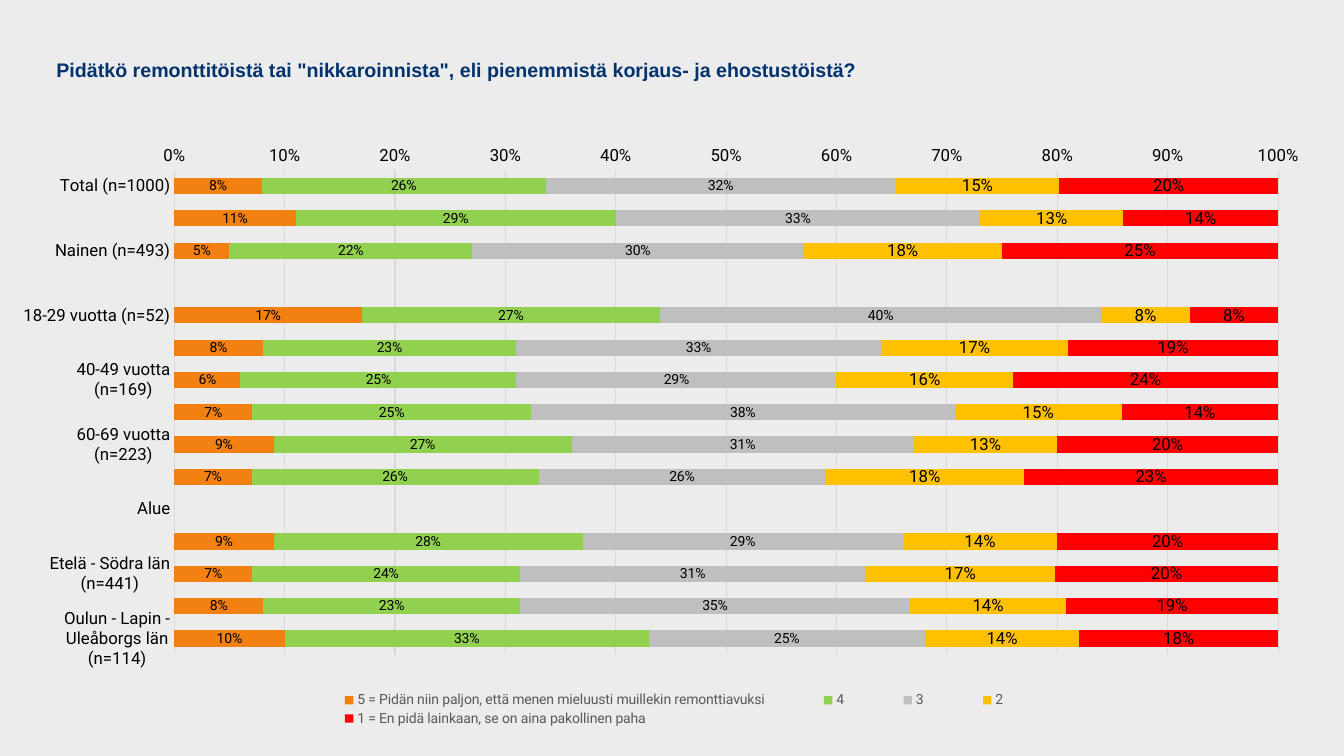
import dataclasses
from typing import Optional

import pptx
import pptx.chart.chart
import pptx.chart.data
import pptx.dml.color
import pptx.enum.chart
import pptx.enum.text
import pptx.oxml
import pptx.oxml.ns
import pptx.slide
import pptx.util

SLIDE_WIDTH = pptx.util.Inches(13.33)
SLIDE_HEIGHT = pptx.util.Inches(7.5)
COLOURS = {
    "background": "ECECED",
    "title": "00326E",
    "text": "000000",
    "legend": "595959",
    "grid": "D9D9D9",
    "orange": "F38112",
    "green": "92D050",
    "grey": "BFBFBF",
    "yellow": "FFC000",
    "red": "FF0000",
}
CATEGORIES = [
    "Total (n=1000)", "Mies (n=505)", "Nainen (n=493)", "Ikäryhmä",
    "18-29 vuotta (n=52)", "30-39 vuotta (n=138)", "40-49 vuotta (n=169)",
    "50-59 vuotta (n=182)", "60-69 vuotta (n=223)", "70+ vuotta (n=236)",
    "Alue", "Itä - Östra län (n=96)", "Etelä - Södra län (n=441)",
    "Länsi - Västra län (n=349)", "Oulun - Lapin - Uleåborgs län (n=114)",
]


@dataclasses.dataclass(frozen=True)
class Area:
    left: float
    top: float
    width: float
    height: float

    def on_slide(self) -> tuple[int, int, int, int]:
        return (
            int(self.left * SLIDE_WIDTH), int(self.top * SLIDE_HEIGHT),
            int(self.width * SLIDE_WIDTH), int(self.height * SLIDE_HEIGHT),
        )


@dataclasses.dataclass(frozen=True)
class Answer:
    name: str
    colour: str
    label_size: int
    percents: list[Optional[int]]


TITLE_AREA = Area(0.042, 0.0827, 0.916, 0.032)
CHART_AREA = Area(0.0173, 0.1773, 0.9685, 0.7907)
PLOT_SHARE = Area(0.116, 0.06, 0.848, 0.811)
LEGEND_SHARE = Area(0.205, 0.93, 0.59, 0.065)

ANSWERS = [
    Answer("5 = Pidän niin paljon, että menen mieluusti muillekin remonttiavuksi", "orange", 10,
           [8, 11, 5, None, 17, 8, 6, 7, 9, 7, None, 9, 7, 8, 10]),
    Answer("4", "green", 10,
           [26, 29, 22, None, 27, 23, 25, 25, 27, 26, None, 28, 24, 23, 33]),
    Answer("3", "grey", 10,
           [32, 33, 30, None, 40, 33, 29, 38, 31, 26, None, 29, 31, 35, 25]),
    Answer("2", "yellow", 12,
           [15, 13, 18, None, 8, 17, 16, 15, 13, 18, None, 14, 17, 14, 14]),
    Answer("1 = En pidä lainkaan, se on aina pakollinen paha", "red", 12,
           [20, 14, 25, None, 8, 19, 24, 14, 20, 23, None, 20, 20, 19, 18]),
]


def colour(name: str) -> pptx.dml.color.RGBColor:
    return pptx.dml.color.RGBColor.from_string(COLOURS[name])


def style_font(font, size: int, colour_name: str = "text", face: str = "Roboto", bold: bool = False) -> None:
    font.name = face
    font.size = pptx.util.Pt(size)
    font.bold = bold
    font.color.rgb = colour(colour_name)


def style_line(line) -> None:
    line.color.rgb = colour("grid")
    line.width = pptx.util.Pt(0.75)


def set_layout(parent, position: int, area: Area, inner: bool = False) -> None:
    for layout in parent.findall(pptx.oxml.ns.qn("c:layout")):
        parent.remove(layout)
    target = '<c:layoutTarget val="inner"/>' if inner else ""
    parent.insert(position, pptx.oxml.parse_xml(
        f'<c:layout {pptx.oxml.ns.nsdecls("c")}><c:manualLayout>{target}'
        '<c:xMode val="edge"/><c:yMode val="edge"/>'
        f'<c:x val="{area.left}"/><c:y val="{area.top}"/>'
        f'<c:w val="{area.width}"/><c:h val="{area.height}"/>'
        '</c:manualLayout></c:layout>'
    ))


def add_title(slide: pptx.slide.Slide) -> None:
    text_frame = slide.shapes.add_textbox(*TITLE_AREA.on_slide()).text_frame
    text_frame.word_wrap = False
    text_frame.margin_left = text_frame.margin_right = 0
    text_frame.margin_top = text_frame.margin_bottom = 0
    text_frame.text = 'Pidätkö remonttitöistä tai "nikkaroinnista", eli pienemmistä korjaus- ja ehostustöistä?'
    paragraph = text_frame.paragraphs[0]
    paragraph.alignment = pptx.enum.text.PP_ALIGN.LEFT
    paragraph.line_spacing = 0.8
    style_font(paragraph.runs[0].font, 14, "title", "Arial", True)


def style_axes(chart: pptx.chart.chart.Chart) -> None:
    for axis in (chart.category_axis, chart.value_axis):
        axis.major_tick_mark = pptx.enum.chart.XL_TICK_MARK.NONE
        axis.minor_tick_mark = pptx.enum.chart.XL_TICK_MARK.NONE
        style_font(axis.tick_labels.font, 12)
    chart.category_axis.reverse_order = True
    style_line(chart.category_axis.format.line)
    value_axis = chart.value_axis
    value_axis.minimum_scale = 0
    value_axis.maximum_scale = 1
    value_axis.major_unit = 0.1
    value_axis.format.line.fill.background()
    value_axis.has_major_gridlines = True
    style_line(value_axis.major_gridlines.format.line)
    value_axis.tick_labels.number_format = "0%"
    value_axis.tick_labels.number_format_is_linked = False


def style_series(series, answer: Answer) -> None:
    series.format.fill.solid()
    series.format.fill.fore_color.rgb = colour(answer.colour)
    series.invert_if_negative = False
    labels = series.data_labels
    labels.show_value = True
    labels.number_format = "0%"
    labels.number_format_is_linked = False
    labels.position = pptx.enum.chart.XL_LABEL_POSITION.CENTER
    style_font(labels.font, answer.label_size)


def add_answer_chart(slide: pptx.slide.Slide) -> None:
    data = pptx.chart.data.CategoryChartData(number_format="0%")
    data.categories = CATEGORIES
    for answer in ANSWERS:
        data.add_series(answer.name, [None if p is None else p / 100 for p in answer.percents])
    chart = slide.shapes.add_chart(
        pptx.enum.chart.XL_CHART_TYPE.BAR_STACKED_100, *CHART_AREA.on_slide(), data
    ).chart
    chart.has_title = False
    style_font(chart.font, 10)
    style_axes(chart)
    plot = chart.plots[0]
    plot.gap_width = 100
    plot.overlap = 100
    plot.vary_by_categories = False
    for series, answer in zip(plot.series, ANSWERS):
        style_series(series, answer)
    chart.has_legend = True
    chart.legend.position = pptx.enum.chart.XL_LEGEND_POSITION.BOTTOM
    chart.legend.include_in_layout = False
    style_font(chart.legend.font, 10, "legend")
    plot_area = chart.element.find(".//" + pptx.oxml.ns.qn("c:plotArea"))
    legend = chart.element.find(".//" + pptx.oxml.ns.qn("c:legend"))
    set_layout(plot_area, 0, PLOT_SHARE, inner=True)
    set_layout(legend, 1, LEGEND_SHARE)


def main() -> None:
    presentation = pptx.Presentation()
    presentation.slide_width = SLIDE_WIDTH
    presentation.slide_height = SLIDE_HEIGHT
    slide = presentation.slides.add_slide(presentation.slide_layouts[6])
    slide.background.fill.solid()
    slide.background.fill.fore_color.rgb = colour("background")
    add_title(slide)
    add_answer_chart(slide)
    presentation.save("out.pptx")


if __name__ == "__main__":
    main()
